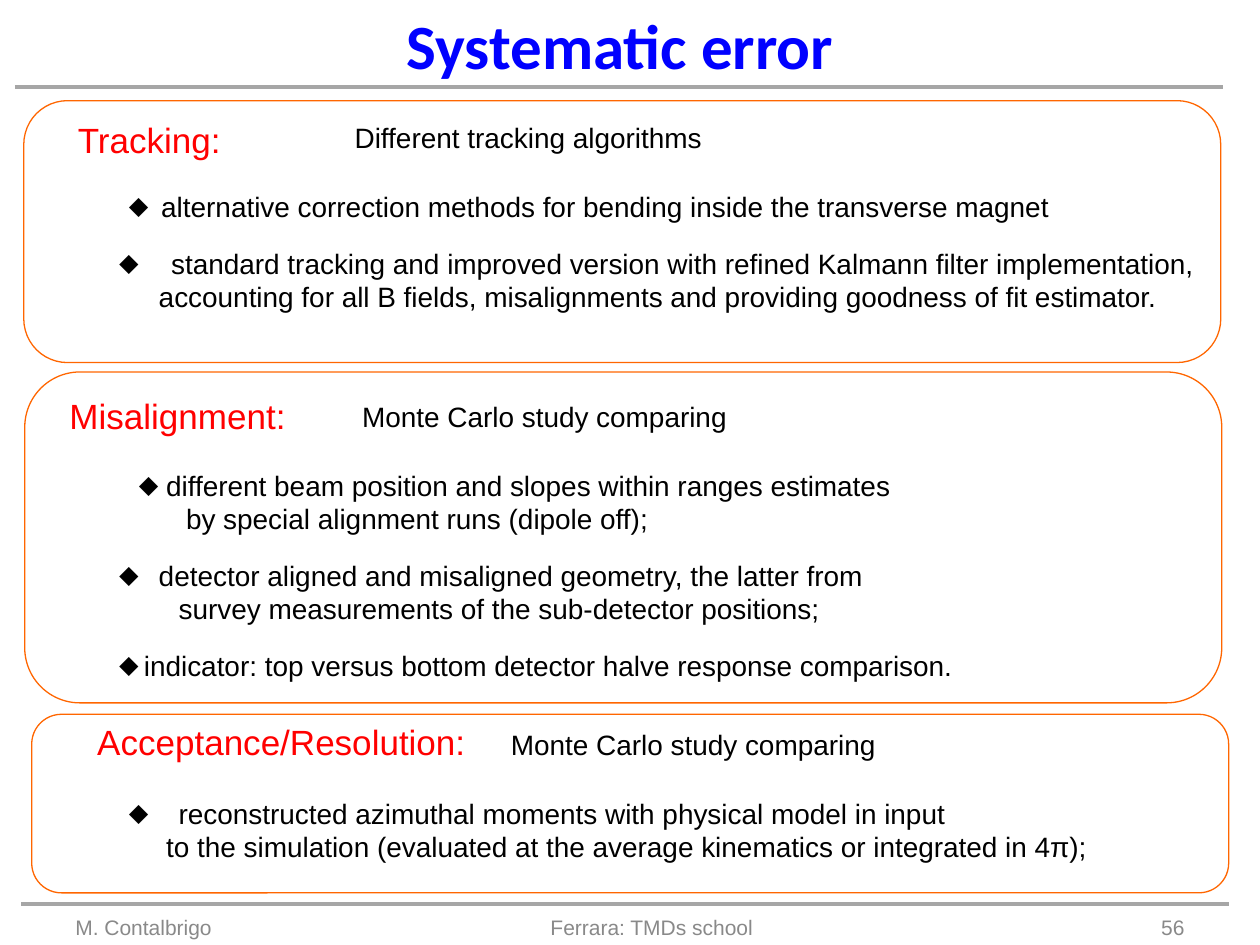
from dataclasses import dataclass

from lxml.etree import SubElement
from pptx import Presentation
from pptx.dml.color import RGBColor as Rgb
from pptx.enum.shapes import MSO_CONNECTOR as Link, MSO_SHAPE as Kind
from pptx.enum.text import MSO_ANCHOR as Anchor, MSO_AUTO_SIZE as Fit, PP_ALIGN as Align
from pptx.oxml.ns import qn
from pptx.util import Cm, Pt


@dataclass(frozen=True)
class Theme:
    sans: str = "Arial"
    head: str = "Calibri"
    blue: str = "0000FF"
    red: str = "FF0000"
    black: str = "000000"
    orange: str = "FF6600"
    rule: str = "A6A6A6"
    grey: str = "898989"
    title: int = 36
    topic: int = 20
    body: int = 16
    foot: int = 12
    pitch: int = 19
    intro_gap: float = 20.4
    item_gap: float = 13.4


T = Theme()
LEFT, WIDE = 2.4, 22.2  # list column, cm

# Each panel: box, topic (x, y, text), list top, intro (x, text), items.
# Each item: bullet x, then (x, text) for each of its lines, from LEFT.
PANELS = [
    ((0.48, 2.03, 24.13, 5.28), (1.57, 2.39, "Tracking:"), 2.44,
     (4.75, "Different tracking algorithms"), [
        (0.2, [(0.85, "alternative correction methods for bending inside the transverse magnet")]),
        (0, [(1.05, "standard tracking and improved version with refined Kalmann filter implementation,"),
             (0.8, "accounting for all B fields, misalignments and providing goodness of fit estimator.")]),
     ]),
    ((0.5, 7.5, 24.13, 6.67), (1.4, 7.95, "Misalignment:"), 8.06,
     (4.9, "Monte Carlo study comparing"), [
        (0.4, [(0.95, "different beam position and slopes within ranges estimates"),
               (1.35, "by special alignment runs (dipole off);")]),
        (0, [(0.8, "detector aligned and misaligned geometry, the latter from"),
             (1.2, "survey measurements of the sub-detector positions;")]),
        (0, [(0.5, "indicator: top versus bottom detector halve response comparison.")]),
     ]),
    ((0.64, 14.4, 24.13, 3.6), (1.96, 14.53, "Acceptance/Resolution:"), 14.67,
     (7.9, "Monte Carlo study comparing"), [
        (0.2, [(1.2, "reconstructed azimuthal moments with physical model in input"),
               (0.95, "to the simulation (evaluated at the average kinematics or integrated in 4π);")]),
     ]),
]


def place(shape, x, y, w, h):
    shape.left, shape.top, shape.width, shape.height = Cm(x), Cm(y), Cm(w), Cm(h)


def frame(shape, anchor=Anchor.TOP, wrap=True):
    tf = shape.text_frame
    tf.auto_size, tf.word_wrap, tf.vertical_anchor = Fit.NONE, wrap, anchor
    tf.margin_left = tf.margin_right = tf.margin_top = tf.margin_bottom = 0
    return tf


def write(para, text, size, color, face=T.sans, bold=False):
    run = para.add_run()
    run.text = text
    font = run.font
    font.name, font.size, font.bold = face, Pt(size), bold
    font.color.rgb = Rgb.from_string(color)


def label(slide, box, text, size, color, align=Align.LEFT, anchor=Anchor.TOP, wrap=True):
    shape = slide.shapes.add_textbox(*map(Cm, box))
    para = frame(shape, anchor, wrap).paragraphs[0]
    para.alignment = align
    write(para, text, size, color)


def rule(slide, x, y, end):
    line = slide.shapes.add_connector(Link.STRAIGHT, Cm(x), Cm(y), Cm(end), Cm(y))
    line.line.color.rgb = Rgb.from_string(T.rule)
    line.line.width = Pt(2)
    SubElement(line._element.spPr, qn("a:effectLst"))


def indent(para, x, mark=None):
    props = para._p.get_or_add_pPr()
    props.set("marL", str(Cm(x)))
    props.set("indent", str(0 if mark is None else Cm(mark) - Cm(x)))
    if mark is None:
        SubElement(props, qn("a:buNone"))
    else:
        SubElement(props, qn("a:buFont"), typeface=T.sans)
        SubElement(props, qn("a:buChar"), char="⬥")


def fill_list(holder, top, height, intro, items):
    place(holder, LEFT, top, WIDE, height)
    tf = frame(holder)
    rows = [(*intro, None, 0)]
    for i, (mark, lines) in enumerate(items):
        for j, (x, text) in enumerate(lines):
            gap = 0 if j else T.item_gap if i else T.intro_gap
            rows.append((x, text, None if j else mark, gap))
    for i, (x, text, mark, gap) in enumerate(rows):
        para = tf.add_paragraph() if i else tf.paragraphs[0]
        indent(para, x, mark)
        para.alignment = Align.LEFT
        para.line_spacing, para.space_before, para.space_after = Pt(T.pitch), Pt(gap), Pt(0)
        write(para, text, T.body, T.black)


def panel(slide, holder, box, topic, top, intro, items):
    edge = slide.shapes.add_shape(Kind.ROUNDED_RECTANGLE, *map(Cm, box))
    edge.shadow.inherit = False
    edge.fill.background()
    edge.line.color.rgb = Rgb.from_string(T.orange)
    edge.line.width = Pt(0.75)
    x, y, text = topic
    label(slide, (x, y, 8, 0.85), text, T.topic, T.red, wrap=False)
    fill_list(holder, top, box[1] + box[3] - top, intro, items)


def main():
    deck = Presentation()
    deck.slide_width, deck.slide_height = Cm(25.4), Cm(19.05)
    # The comparison layout has a title and four body placeholders
    slide = deck.slides.add_slide(deck.slide_layouts[4])
    title, *bodies = slide.placeholders

    # Title and rules
    place(title, 7.9, 0, 9.2, 1.8)
    para = frame(title, Anchor.MIDDLE, False).paragraphs[0]
    para.alignment = Align.CENTER
    write(para, "Systematic error", T.title, T.blue, T.head, True)
    rule(slide, 0.3, 1.75, 24.65)
    rule(slide, 0.43, 18.22, 24.77)

    # Panels
    for holder, data in zip(bodies, PANELS):
        panel(slide, holder, *data)
    for spare in bodies[len(PANELS):]:
        spare._element.getparent().remove(spare._element)

    # Footer
    for x, w, text, align in [(1.52, 5.5, "M. Contalbrigo", Align.LEFT),
                              (8.69, 8.9, "Ferrara: TMDs school", Align.CENTER),
                              (18.4, 5.48, "56", Align.RIGHT)]:
        label(slide, (x, 18.1, w, 0.85), text, T.foot, T.grey, align, Anchor.BOTTOM)

    deck.save("out.pptx")


if __name__ == "__main__":
    main()
